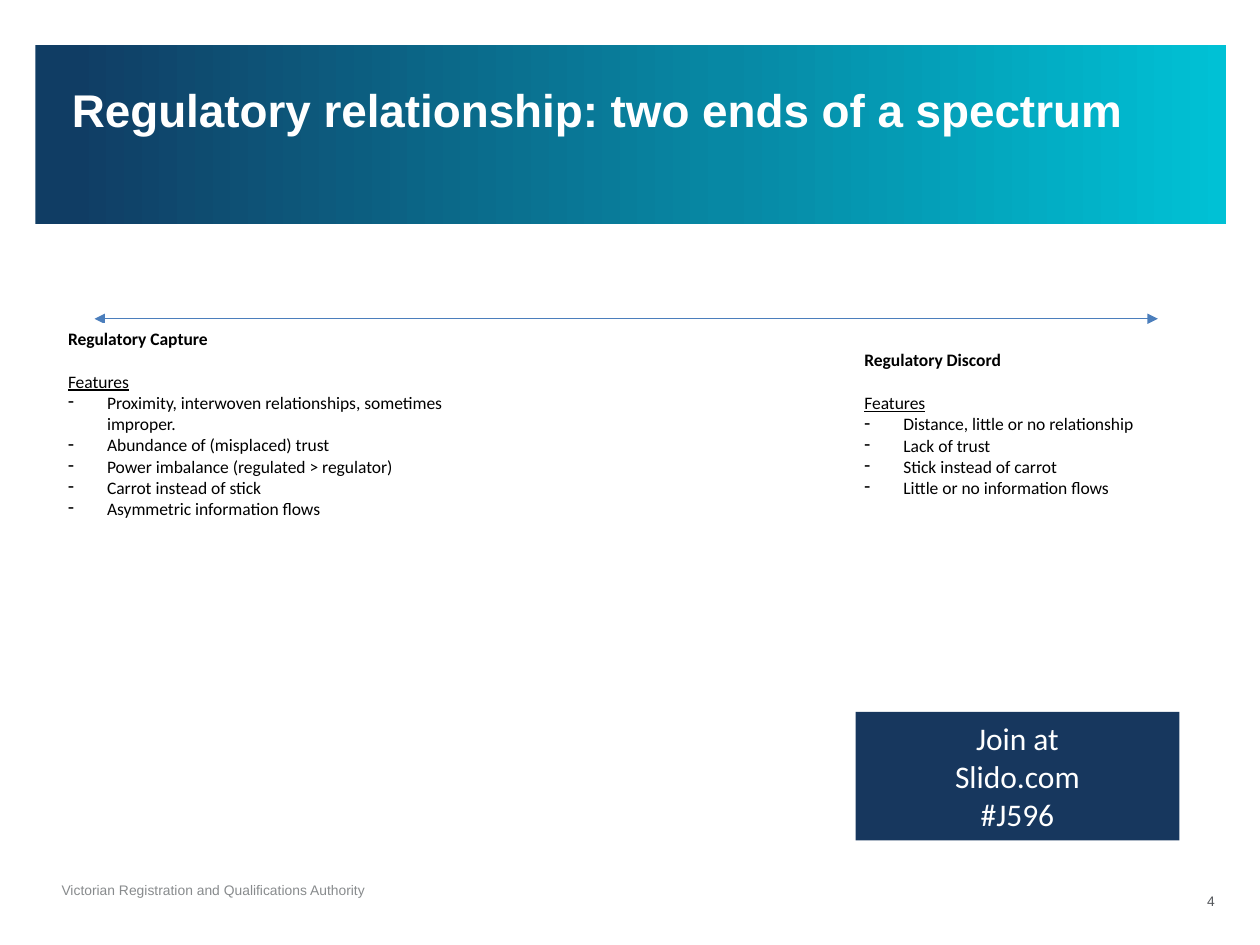
from copy import deepcopy

from lxml.etree import SubElement
from pptx import Presentation
from pptx.dml.color import RGBColor as RGB
from pptx.enum.shapes import MSO_CONNECTOR as LINE, MSO_SHAPE as SHAPE
from pptx.enum.text import MSO_ANCHOR as ANCHOR, PP_ALIGN as ALIGN
from pptx.oxml.ns import qn
from pptx.util import Inches, Pt

COLORS = dict(navy="17375E", arrow="4B7EBC", white="FFFFFF", black="000000",
              footer="888B8D", number="53565A")
GRADIENT = [(0.03, "103D64"), (0.58, "0788A4"), (1, "00C1D5")]
TITLE = "Regulatory relationship: two ends of a spectrum"
FOOTER = "Victorian Registration and Qualifications Authority"
NUMBER = "4"
JOIN = ["Join at", "Slido.com", "#J596"]
ENDS = [
    dict(head="Regulatory Capture", box=(0.47, 2.57, 3.52), rows=[0.34, 1.43],
         features=["Proximity, interwoven relationships, sometimes improper.",
                   "Abundance of (misplaced) trust",
                   "Power imbalance (regulated > regulator)",
                   "Carrot instead of stick",
                   "Asymmetric information flows"]),
    dict(head="Regulatory Discord", box=(6.79, 2.74, 2.96), rows=[0.34, 1.09, 1.09],
         features=["Distance, little or no relationship",
                   "Lack of trust",
                   "Stick instead of carrot",
                   "Little or no information flows"]),
]
INDENT = 0.31


def inches(*values):
    return [Inches(v) for v in values]


def add_text(tf, text, first=True, size=10, font="Calibri", color="black",
             bold=False, underline=False, align=ALIGN.LEFT, bullet=None):
    p = tf.paragraphs[0] if first else tf.add_paragraph()
    p.alignment = align
    if bullet:
        pPr = p._p.get_or_add_pPr()
        pPr.set("marL", str(Inches(INDENT)))
        pPr.set("indent", str(-Inches(INDENT)))
        SubElement(pPr, qn("a:buChar"), char=bullet)
    r = p.add_run()
    r.text = text
    r.font.name, r.font.size = font, Pt(size)
    r.font.bold, r.font.underline = bold, underline
    r.font.color.rgb = RGB.from_string(COLORS[color])


def add_rect(s, *box):
    sp = s.shapes.add_shape(SHAPE.RECTANGLE, *inches(*box))
    sp.shadow.inherit = False
    sp.line.fill.background()
    return sp


def add_banner(s):
    sp = add_rect(s, 0.28, 0.36, 9.45, 1.42)
    sp.fill.gradient()
    sp.fill.gradient_angle = 0
    stops = sp.element.find(".//" + qn("a:gsLst"))
    stops.append(deepcopy(stops[0]))
    for stop, (position, color) in zip(sp.fill.gradient_stops, GRADIENT):
        stop.position = position
        stop.color.rgb = RGB.from_string(color)
    return sp


def add_title(s, banner):
    sp = s.shapes.title
    sp.left, sp.top, sp.width, sp.height = inches(0.47, 0.6, 9.01, 1.09)
    sp.text_frame.vertical_anchor = ANCHOR.TOP
    add_text(sp.text_frame, TITLE, size=26.2, font="Arial", color="white", bold=True)
    sp.element.addprevious(banner.element)


def add_label(s, box, text, wrap, anchor, **fmt):
    tf = s.shapes.add_textbox(*inches(*box)).text_frame
    tf.word_wrap, tf.vertical_anchor = wrap, anchor
    add_text(tf, text, size=7.9, font="Arial", **fmt)


def add_spectrum(s):
    line = s.shapes.add_connector(LINE.STRAIGHT, *inches(0.75, 2.53, 9.19, 2.53))
    line.line.width = Pt(0.75)
    line.line.color.rgb = RGB.from_string(COLORS["arrow"])
    for end in ("a:headEnd", "a:tailEnd"):
        SubElement(line.line._get_or_add_ln(), qn(end), type="triangle")
    SubElement(line.element.spPr, qn("a:effectLst"))


def add_end(s, head, box, rows, features):
    table = s.shapes.add_table(len(rows), 1, *inches(*box, sum(rows))).table
    for row, height in zip(table.rows, rows):
        row.height = Inches(height)
        cell = row.cells[0]
        cell.fill.background()
        cell.margin_left = cell.margin_right = Inches(0.07)
        cell.margin_top = cell.margin_bottom = Inches(0.04)
    add_text(table.cell(0, 0).text_frame, head, bold=True)
    tf = table.cell(1, 0).text_frame
    add_text(tf, "Features", underline=True)
    for feature in features:
        add_text(tf, feature, first=False, bullet="-")


def add_join(s):
    sp = add_rect(s, 6.79, 5.65, 2.57, 1.02)
    sp.fill.solid()
    sp.fill.fore_color.rgb = RGB.from_string(COLORS["navy"])
    for i, text in enumerate(JOIN):
        add_text(sp.text_frame, text, first=i == 0, size=18, color="white",
                 align=ALIGN.CENTER)


def main():
    prs = Presentation()
    prs.slide_width, prs.slide_height = inches(10, 7.5)
    s = prs.slides.add_slide(prs.slide_layouts[5])
    add_title(s, add_banner(s))
    add_label(s, (0.39, 6.95, 2.64, 0.23), FOOTER, False, ANCHOR.TOP, color="footer")
    add_label(s, (6.92, 6.95, 2.82, 0.4), NUMBER, True, ANCHOR.MIDDLE,
              color="number", align=ALIGN.RIGHT)
    add_spectrum(s)
    for end in ENDS:
        add_end(s, **end)
    add_join(s)
    prs.save("out.pptx")


if __name__ == "__main__":
    main()
